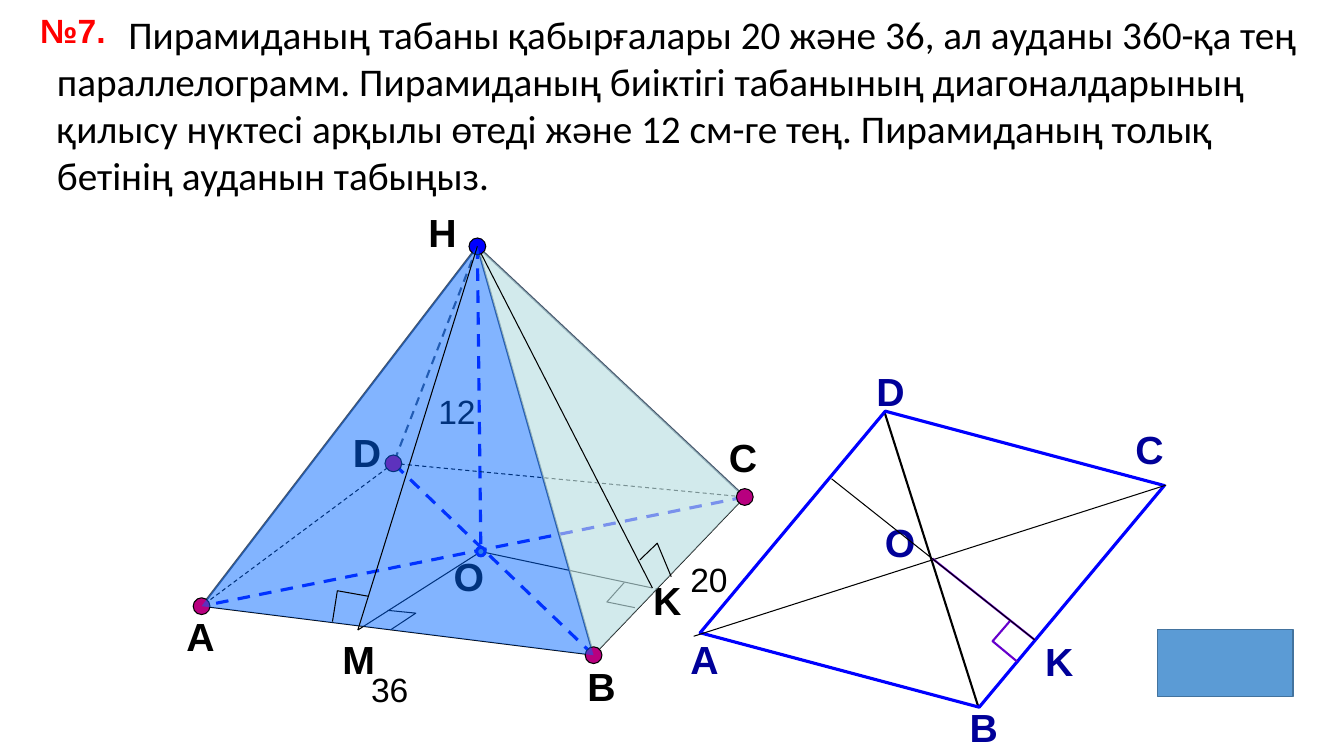
from lxml import etree
from pptx import Presentation
from pptx.dml.color import RGBColor
from pptx.enum.dml import MSO_LINE
from pptx.enum.shapes import MSO_CONNECTOR, MSO_SHAPE
from pptx.oxml.ns import qn
from pptx.util import Pt

BLACK = RGBColor(0x00, 0x00, 0x00)
RED = RGBColor(0xFF, 0x00, 0x00)
BLUE = RGBColor(0x00, 0x00, 0xFF)
NAVY = RGBColor(0x00, 0x00, 0x99)
SLATE = RGBColor(0x44, 0x54, 0x6A)
PURPLE = RGBColor(0x66, 0x00, 0xCC)
MAGENTA = RGBColor(0xB8, 0x00, 0x7F)
STEEL = RGBColor(0x5B, 0x9B, 0xD5)
STEEL_DARK = RGBColor(0x43, 0x73, 0x9E)
FRONT_FACE = RGBColor(0x00, 0x66, 0xFF)
SIDE_FACE = RGBColor(0xBB, 0xE0, 0xE3)

PROBLEM = ("Пирамиданың табаны қабырғалары 20 және 36, ал ауданы 360-қа тең "
           "параллелограмм. Пирамиданың биіктігі табанының диагоналдарының "
           "қилысу нүктесі арқылы өтеді және 12 см-ге тең. Пирамиданың толық "
           "бетінің ауданын табыңыз.")

LETTER = {"name": "Arial", "size": Pt(28), "bold": True}
NUMBER = {"name": "Arial", "size": Pt(24), "bold": False}
HEADING = {"name": "Arial", "size": Pt(24), "bold": True}
BODY = {"name": "Calibri", "size": Pt(28), "bold": False}


def add_text(slide, box, text, font, color=BLACK):
    tf = slide.shapes.add_textbox(*map(Pt, box)).text_frame
    tf.word_wrap = True
    p = tf.paragraphs[0]
    r = p.add_run()
    r.text = text
    for name, value in font.items():
        setattr(r.font, name, value)
    r.font.color.rgb = color
    return p


def set_line(sp, color, width, dash=None):
    sp.line.color.rgb = color
    sp.line.width = Pt(width)
    if dash:
        sp.line.dash_style = dash


def set_fill(sp, color, alpha=None):
    """Fill with a colour, optionally at an opacity in percent."""
    sp.shadow.inherit = False
    if color is None:
        sp.fill.background()
        return
    sp.fill.solid()
    sp.fill.fore_color.rgb = color
    if alpha:
        clr = sp._element.spPr.find(f"{qn('a:solidFill')}/{qn('a:srgbClr')}")
        etree.SubElement(clr, qn("a:alpha")).set("val", str(alpha * 1000))


class Figure:
    """Draws parts at offsets from the top left corner of a figure."""

    def __init__(self, slide, left, top):
        self.slide, self.left, self.top = slide, left, top

    def at(self, point):
        return Pt(self.left + point[0]), Pt(self.top + point[1])

    def segment(self, start, end, color=BLACK, width=0.75, dash=None):
        sp = self.slide.shapes.add_connector(
            MSO_CONNECTOR.STRAIGHT, *self.at(start), *self.at(end))
        set_line(sp, color, width, dash)
        etree.SubElement(sp._element.spPr, qn("a:effectLst"))

    def outline(self, points, close=False):
        start, *rest = map(self.at, points)
        builder = self.slide.shapes.build_freeform(*start)
        builder.add_line_segments(rest, close=close)
        return builder.convert_to_shape()

    def right_angle(self, points, color=BLACK, width=0.75):
        sp = self.outline(points)
        set_fill(sp, None)
        set_line(sp, color, width)

    def face(self, points, color, alpha):
        sp = self.outline(points, close=True)
        set_fill(sp, color, alpha)
        sp.line.fill.background()

    def dot(self, center, color, size=12, line=BLACK, width=0.75):
        corner = [c - size / 2 for c in center]
        sp = self.slide.shapes.add_shape(
            MSO_SHAPE.OVAL, *self.at(corner), Pt(size), Pt(size))
        set_fill(sp, color)
        set_line(sp, line, width)

    def labels(self, places, font, color=BLACK):
        for text, x, y in places:
            add_text(self.slide, (self.left + x, self.top + y, 42, 41),
                     text, font, color)


def draw_pyramid(slide, left, top):
    fig = Figure(slide, left, top)
    a, b, c, d = (18, 289), (298, 324), (406, 211), (155, 187)
    h, o, m, k = (215, 32), (217.5, 250), (129.6, 306), (340, 276)

    for start, end in ((a, b), (b, c), (o, k), (o, m)):
        fig.segment(start, end)
    for start, end in ((b, d), (c, a), (h, o)):
        fig.segment(start, end, BLUE, 2.25, MSO_LINE.DASH)
    for end in (a, b, c):
        fig.segment(h, end, SLATE, 1.5)
    fig.segment(h, d, SLATE, 1.5, MSO_LINE.DASH)
    for end in (a, c):
        fig.segment(d, end, dash=MSO_LINE.DASH)
    fig.dot(o, STEEL, 6, BLUE, 2.25)
    fig.right_angle([(320, 272), (307.5, 286), (327.5, 290)])
    fig.right_angle([(151, 292), (171, 294), (153, 306)])
    fig.labels([("D", 119, 158.5), ("Н", 173, 1.5), ("O", 191, 247),
                ("А", 0, 290), ("B", 286.5, 325.5), ("K", 333.5, 264),
                ("С", 387.5, 162), ("М", 111.5, 306)], LETTER)
    fig.labels([("20", 360, 252), ("36", 132, 330), ("12", 180, 132)], NUMBER)

    fig.face([h, c, b], SIDE_FACE, 65)
    fig.segment(k, h)
    fig.right_angle([(353.5, 268), (343.5, 244), (331, 256)])
    for vertex in (a, b, c, d):
        fig.dot(vertex, MAGENTA)
    fig.dot(h, BLUE)
    fig.face([h, a, b], FRONT_FACE, 49)
    fig.segment(h, m)
    fig.right_angle([(111.5, 300), (115, 278), (137.5, 282)])


def draw_base(slide, left, top):
    fig = Figure(slide, left, top)
    o, k = (180, 144), (253, 202)
    fig.segment((146, 40), (213, 250.5), width=1.5)
    fig.labels([("А", 0, 195), ("D", 133, 4), ("С", 318, 45),
                ("В", 199.5, 244), ("О", 139, 112), ("K", 253.5, 196.5)],
               LETTER, NAVY)
    sp = slide.shapes.add_shape(
        MSO_SHAPE.DIAMOND, *fig.at((69, -29.5)), Pt(221.8), Pt(347.8))
    sp.rotation = 72.4
    set_fill(sp, None)
    set_line(sp, BLUE, 2.25)
    fig.segment((347, 91.5), (9.5, 199.5))
    fig.segment(o, k, PURPLE, 1.5)
    fig.right_angle([(235.5, 188.5), (223, 203), (240.5, 217.5)], PURPLE, 1.5)
    fig.segment(k, (108, 87))


def draw_problem(slide, left, top):
    p = add_text(slide, (left + 12, top, 912, 143), PROBLEM, BODY)
    p._p.get_or_add_pPr().set("indent", str(Pt(51)))
    add_text(slide, (left, top, 72, 36), "№7.", HEADING, RED)


def draw_answer_box(slide, left, top):
    sp = slide.shapes.add_shape(
        MSO_SHAPE.RECTANGLE, Pt(left), Pt(top), Pt(96.5), Pt(48))
    set_fill(sp, STEEL)
    set_line(sp, STEEL_DARK, 1)


def main():
    prs = Presentation()
    prs.slide_width, prs.slide_height = Pt(960), Pt(540)
    slide = prs.slides.add_slide(prs.slide_layouts[6])
    draw_problem(slide, 21.6, 3.6)
    draw_pyramid(slide, 126, 144)
    draw_base(slide, 486, 255)
    draw_answer_box(slide, 827, 449.5)
    prs.save("out.pptx")


if __name__ == "__main__":
    main()
